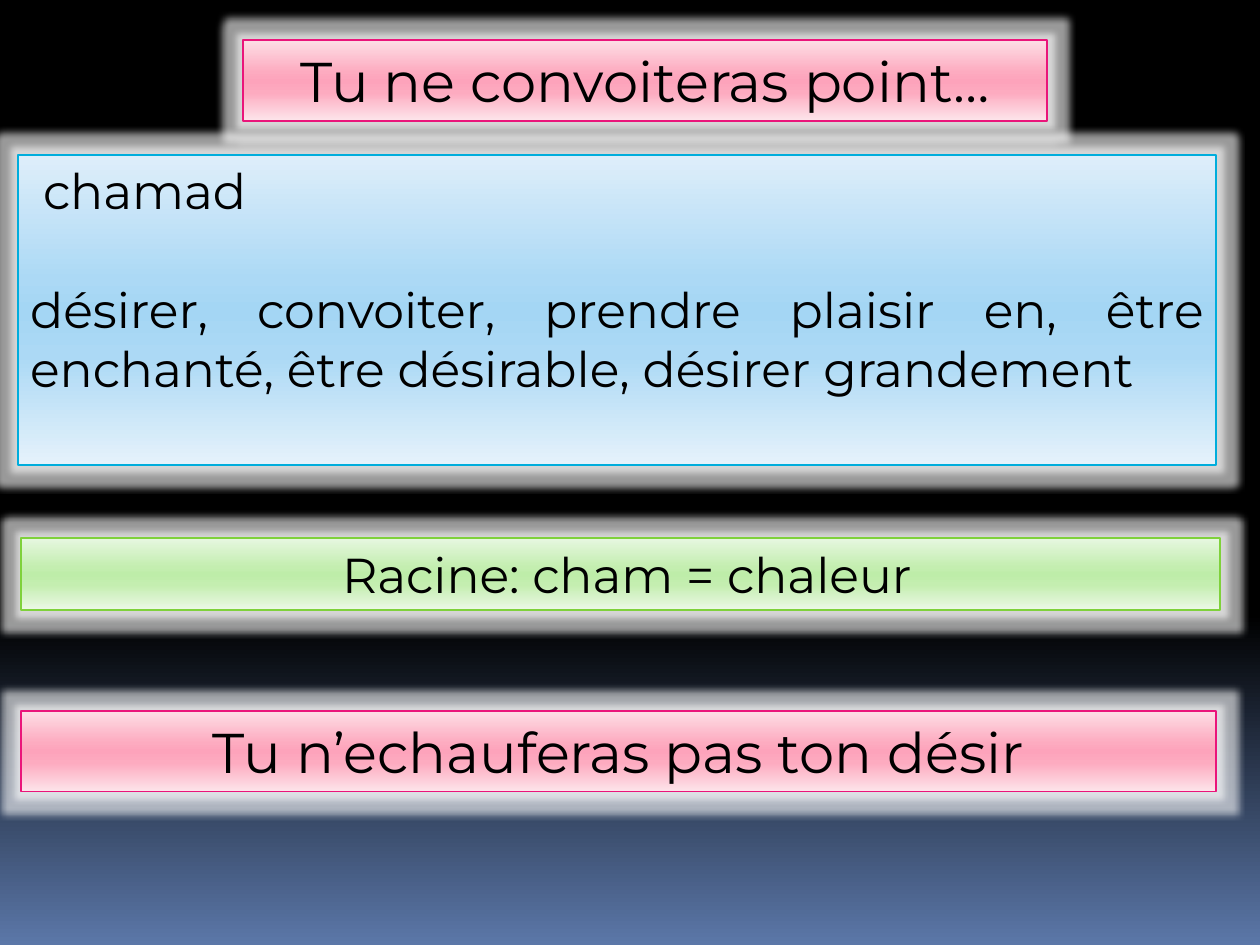
from lxml import etree
from pptx import Presentation
from pptx.dml.color import RGBColor
from pptx.enum.shapes import MSO_SHAPE
from pptx.enum.text import MSO_ANCHOR, PP_ALIGN
from pptx.oxml.ns import qn
from pptx.util import Cm, Pt

RECTANGLE = MSO_SHAPE.RECTANGLE
TOP = MSO_ANCHOR.TOP
CENTER, JUSTIFY = PP_ALIGN.CENTER, PP_ALIGN.JUSTIFY

THEME = {
    "font": "Montserrat",
    "text": "000000",
    "title_size": 32,
    "body_size": 28,
    "paragraph_gap": 34,
    "line_width": 0.94,
    "glow": {"color": "FFFFFF", "radius": Cm(0.28), "opacity": 60},
    "background": {0: "000000", 65: "000000", 100: "5B77A8"},
    "band_stops": (0, 40, 50, 65, 100),
    "pink": ("EA157A", ("FDDEE5", "FDABC0", "FDA3BB", "FDABC0", "FDE5EB")),
    "blue": ("00ADDC", ("DEEEFA", "ACD9F5", "A4D6F4", "ACD9F5", "E5F2FB")),
    "green": ("7FD13B", ("E6F7E0", "C4EEB0", "BEEDA9", "C4EEB0", "ECF8E6")),
}

# Panels: left, top, width, height in cm, colours, size, alignment, paragraphs
PANELS = [
    ((0.36, 3.12, 24.16, 6.25), "blue", "body_size", JUSTIFY,
     [" chamad",
      "désirer, convoiter, prendre plaisir en, être enchanté, "
      "être désirable, désirer grandement"]),
    ((4.9, 0.81, 16.21, 1.63), "pink", "title_size", CENTER,
     ["Tu ne convoiteras point…"]),
    ((0.43, 10.85, 24.16, 1.45), "green", "body_size", CENTER,
     [" Racine: cham = chaleur"]),
    ((0.43, 14.33, 24.08, 1.63), "pink", "title_size", CENTER,
     ["Tu n’echauferas pas ton désir"]),
]


def add_color(parent, color):
    return etree.SubElement(parent, qn("a:srgbClr"), val=color)


def set_gradient(fill, element, stops):
    """Fill from top to bottom with {percent: colour} stops."""
    fill.gradient()
    fill.gradient_angle = 270
    stop_list = element.find(".//" + qn("a:gsLst"))
    for stop in list(stop_list):
        stop_list.remove(stop)
    for percent, color in stops.items():
        stop = etree.SubElement(stop_list, qn("a:gs"), pos=str(percent * 1000))
        add_color(stop, color)


def add_glow(shape):
    style = THEME["glow"]
    effects = shape.element.spPr.find(qn("a:effectLst"))
    glow = etree.SubElement(effects, qn("a:glow"), rad=str(int(style["radius"])))
    color = add_color(glow, style["color"])
    etree.SubElement(color, qn("a:alpha"), val=str(style["opacity"] * 1000))


def add_panel(slide, box, palette, size, alignment, texts):
    line_color, fill_colors = THEME[palette]
    shape = slide.shapes.add_shape(RECTANGLE, *map(Cm, box))
    set_gradient(shape.fill, shape.element,
                 dict(zip(THEME["band_stops"], fill_colors)))
    shape.line.color.rgb = RGBColor.from_string(line_color)
    shape.line.width = Pt(THEME["line_width"])
    shape.shadow.inherit = False
    add_glow(shape)

    frame = shape.text_frame
    frame.word_wrap = True
    frame.vertical_anchor = TOP
    for index, text in enumerate(texts):
        paragraph = frame.add_paragraph() if index else frame.paragraphs[0]
        paragraph.alignment = alignment
        if index:
            paragraph.space_before = Pt(THEME["paragraph_gap"])
        run = paragraph.add_run()
        run.text = text
        run.font.name = THEME["font"]
        run.font.size = Pt(THEME[size])
        run.font.color.rgb = RGBColor.from_string(THEME["text"])


def main():
    presentation = Presentation()
    presentation.slide_width, presentation.slide_height = Cm(25.4), Cm(19.05)
    slide = presentation.slides.add_slide(presentation.slide_layouts[6])
    set_gradient(slide.background.fill, slide.element, THEME["background"])
    for panel in PANELS:
        add_panel(slide, *panel)
    presentation.save("out.pptx")


if __name__ == "__main__":
    main()
